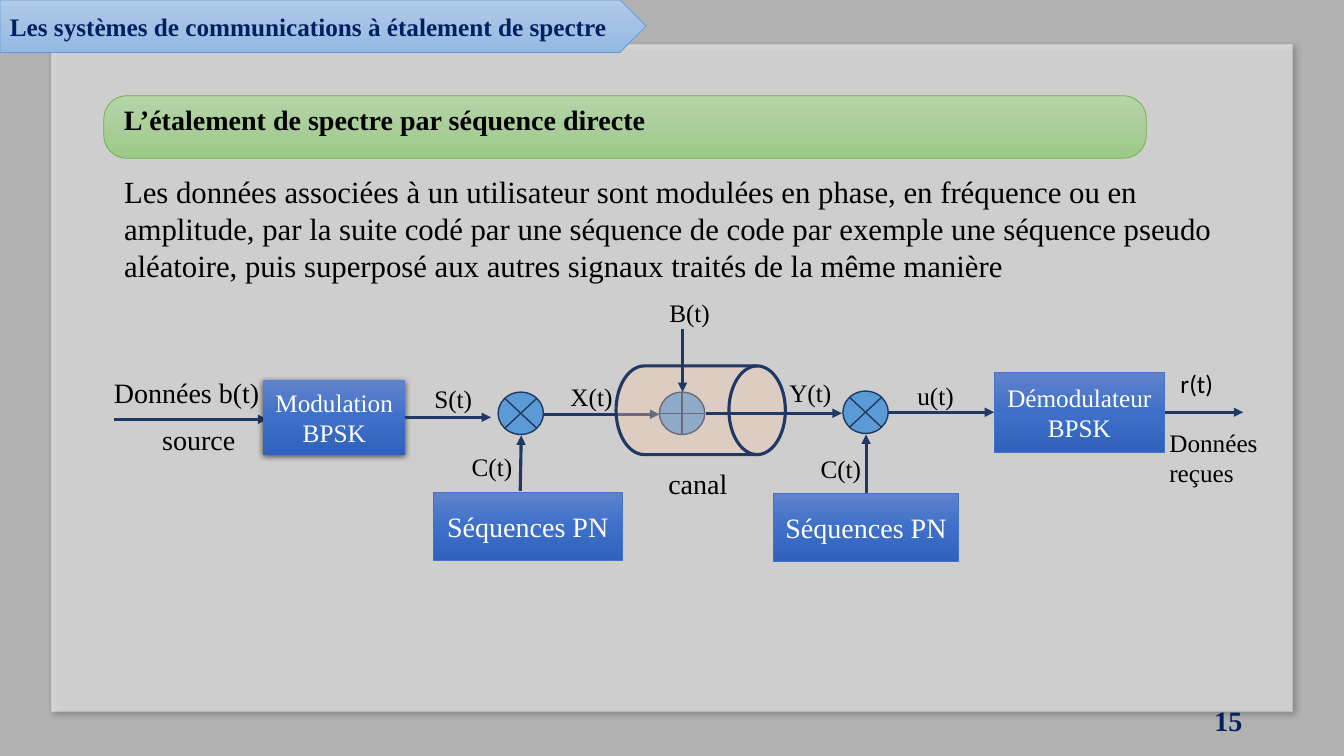
from lxml import etree
from pptx import Presentation
from pptx.dml.color import RGBColor
from pptx.enum.shapes import MSO_CONNECTOR, MSO_SHAPE as SHAPE
from pptx.enum.text import MSO_ANCHOR as ANCHOR, MSO_AUTO_SIZE as AUTO_SIZE, PP_ALIGN as ALIGN
from pptx.oxml import parse_xml
from pptx.oxml.ns import nsdecls, qn
from pptx.util import Inches, Pt

NAVY, TITLE_NAVY, BLUE, WHITE = "203864", "002060", "5B9BD5", "FFFFFF"
BOX_BLUE = ("6183CB", "3E70CA", "3062BB")
BANNER_BLUE = ("B1CBE9", "A3C1E5", "93B9E4")
HEADING_GREEN = ("B5D5A7", "AACE9A", "9CC987")


def color(hex_string):
    return RGBColor.from_string(hex_string)


def write(shape, text, size=20, font="Times New Roman", fill="000000", bold=False,
          align=ALIGN.LEFT, anchor=ANCHOR.TOP, wrap=True, grow=False, inset=None):
    frame = shape.text_frame
    frame.word_wrap = wrap
    frame.vertical_anchor = anchor
    if grow:
        frame.auto_size = AUTO_SIZE.SHAPE_TO_FIT_TEXT
    if inset is not None:
        frame.margin_left = frame.margin_right = Inches(inset)
        frame.margin_top = frame.margin_bottom = Inches(inset)
    paragraph = frame.paragraphs[0]
    paragraph.alignment = align
    run = paragraph.add_run()
    run.text = text
    run.font.name = font
    run.font.size = Pt(size)
    run.font.bold = bold
    run.font.color.rgb = color(fill)


class Diagram:
    """Adds styled elements to one slide."""

    def __init__(self, slide):
        self.shapes = slide.shapes

    def shape(self, kind, left, top, width, height, fill, opacity=None,
              line=None, line_width=0.5, shadow=None):
        shape = self.shapes.add_shape(
            kind, Inches(left), Inches(top), Inches(width), Inches(height))
        shape.shadow.inherit = False
        if isinstance(fill, tuple):
            self.gradient(shape, fill)
        else:
            shape.fill.solid()
            shape.fill.fore_color.rgb = color(fill)
        if opacity is not None:
            solid = shape.fill._xPr.find(qn("a:solidFill"))
            etree.SubElement(solid[0], qn("a:alpha"), val=str(opacity * 1000))
        if line:
            shape.line.color.rgb = color(line)
            shape.line.width = Pt(line_width)
        else:
            shape.line.fill.background()
        if shadow:
            self.shadow(shape, *shadow)
        return shape

    def gradient(self, shape, colors):
        shape.fill.gradient()
        gradient = shape._element.spPr.find(qn("a:gradFill"))
        stops = "".join(
            f'<a:gs pos="{index * 50000}"><a:srgbClr val="{stop}"/></a:gs>'
            for index, stop in enumerate(colors))
        gradient.getparent().replace(gradient, parse_xml(
            f'<a:gradFill {nsdecls("a")} rotWithShape="1"><a:gsLst>{stops}</a:gsLst>'
            '<a:lin ang="5400000" scaled="0"/></a:gradFill>'))

    def shadow(self, shape, opacity, blur, distance, angle):
        effects = shape._element.spPr.find(qn("a:effectLst"))
        effects.append(parse_xml(
            f'<a:outerShdw {nsdecls("a")} blurRad="{Pt(blur)}" dist="{Pt(distance)}" '
            f'dir="{angle * 60000}" algn="ctr" rotWithShape="0"><a:srgbClr val="000000">'
            f'<a:alpha val="{opacity * 1000}"/></a:srgbClr></a:outerShdw>'))

    def block(self, text, left, top, width, height, size=18, line="4472C4", shadow=None):
        shape = self.shape(SHAPE.RECTANGLE, left, top, width, height, BOX_BLUE,
                           line=line, shadow=shadow)
        write(shape, text, size=size, fill=WHITE, align=ALIGN.CENTER, anchor=ANCHOR.MIDDLE)
        return shape

    def node(self, kind, left, top):
        return self.shape(kind, left, top, 0.45, 0.42, BLUE, line=NAVY, line_width=1)

    def arrow(self, x1, y1, x2, y2, source=None, target=None):
        arrow = self.shapes.add_connector(
            MSO_CONNECTOR.STRAIGHT, Inches(x1), Inches(y1), Inches(x2), Inches(y2))
        if source:
            arrow.begin_connect(*source)
        if target:
            arrow.end_connect(*target)
        arrow.line.color.rgb = color(NAVY)
        arrow.line.width = Pt(2.25)
        etree.SubElement(arrow.line._get_or_add_ln(), qn("a:tailEnd"), type="triangle")
        etree.SubElement(arrow._element.spPr, qn("a:effectLst"))

    def label(self, text, left, top, width, height=0.4, **style):
        box = self.shapes.add_textbox(
            Inches(left), Inches(top), Inches(width), Inches(height))
        write(box, text, **style)


def main():
    presentation = Presentation()
    presentation.slide_width = Inches(13.33)
    presentation.slide_height = Inches(7.5)
    diagram = Diagram(presentation.slides.add_slide(presentation.slide_layouts[6]))

    # Background and panel
    diagram.shape(SHAPE.RECTANGLE, 0, 0, 13.33, 7.5, "000000", opacity=30)
    diagram.shape(SHAPE.RECTANGLE, 0.51, 0.44, 12.31, 6.62, WHITE, opacity=59,
                  shadow=(40, 4, 3, 45))

    # Heading and introduction
    diagram.label(
        "Les données associées à un utilisateur sont modulées en phase, en fréquence ou en "
        "amplitude, par la suite codé par une séquence de code par exemple une séquence "
        "pseudo aléatoire, puis superposé aux autres signaux traités de la même manière",
        1.23, 1.71, 10.88, 1.11, size=22, inset=0, grow=True)
    heading = diagram.shape(SHAPE.ROUNDED_RECTANGLE, 1.03, 0.95, 10.34, 0.62,
                            HEADING_GREEN, line="70AD47")
    heading.adjustments[0] = 0.37
    diagram.label("L’étalement de spectre par séquence directe", 1.13, 0.97, 5.41, 0.44,
                  bold=True, wrap=False, grow=True)

    # Transmitter
    diagram.arrow(1.13, 4.16, 2.65, 4.16)
    modulator = diagram.block("Modulation BPSK", 2.61, 3.77, 1.41, 0.74, line=None,
                              shadow=(63, 4.5, 1.5, 90))
    diagram.arrow(4.02, 4.14, 4.87, 4.14, source=(modulator, 3))
    diagram.node(SHAPE.FLOWCHART_SUMMING_JUNCTION, 4.94, 3.89)
    diagram.arrow(5.16, 4.87, 5.17, 4.32)
    diagram.block("Séquences PN", 4.3, 4.88, 1.87, 0.68, size=20)

    # Channel
    diagram.arrow(5.39, 4.11, 6.54, 4.11)
    diagram.node(SHAPE.FLOWCHART_OR, 6.54, 3.89)
    diagram.shape(SHAPE.FLOWCHART_DIRECT_ACCESS_STORAGE, 6.11, 3.63, 1.68, 0.88, "F8CBAD",
                  opacity=34, line=NAVY, line_width=2.25)
    diagram.arrow(7, 4.1, 8.35, 4.1)
    diagram.arrow(6.77, 3.26, 6.77, 3.89)

    # Receiver
    diagram.node(SHAPE.FLOWCHART_SUMMING_JUNCTION, 8.36, 3.88)
    demodulator = diagram.block("Démodulateur BPSK", 9.86, 3.69, 1.69, 0.8)
    diagram.arrow(8.82, 4.09, 9.86, 4.09, target=(demodulator, 1))
    diagram.arrow(11.55, 4.09, 12.33, 4.09, source=(demodulator, 3))
    receiver_code = diagram.block("Séquences PN", 7.67, 4.89, 1.84, 0.68, size=20)
    diagram.arrow(8.59, 4.89, 8.59, 4.31, source=(receiver_code, 0))

    # Signal names
    for text, left, top, width in [
        ("S(t)", 4.21, 3.75, 0.6), ("C(t)", 4.58, 4.43, 0.64), ("B(t)", 6.54, 2.9, 0.73),
        ("X(t)", 5.56, 3.73, 0.67), ("Y(t)", 7.73, 3.69, 0.7), ("C(t)", 8.04, 4.45, 0.63),
        ("u(t)", 9, 3.72, 0.58),
    ]:
        diagram.label(text, left, top, width, size=18, grow=True)
    diagram.label("r(t)", 11.61, 3.6, 0.58, size=18, font="Calibri", grow=True)

    # Captions
    diagram.label("Données b(t)", 1.03, 3.68, 1.72, 0.44, grow=True)
    diagram.label("source", 1.51, 4.14, 1.35, 0.44, grow=True)
    diagram.label("canal", 6.53, 4.58, 0.94, 0.44, grow=True)
    diagram.label("Données reçues", 11.5, 4.19, 1.26, 0.71, size=18, grow=True)

    # Banner and page number
    banner = diagram.shape(SHAPE.PENTAGON, 0, 0, 6.41, 0.52, BANNER_BLUE, line=BLUE)
    write(banner, "Les systèmes de communications à étalement de spectre", size=18,
          fill=TITLE_NAVY, bold=True, anchor=ANCHOR.MIDDLE)
    diagram.label("15", 9.42, 6.95, 3, fill=TITLE_NAVY, bold=True, align=ALIGN.RIGHT,
                  anchor=ANCHOR.MIDDLE)

    presentation.save("out.pptx")


if __name__ == "__main__":
    main()
